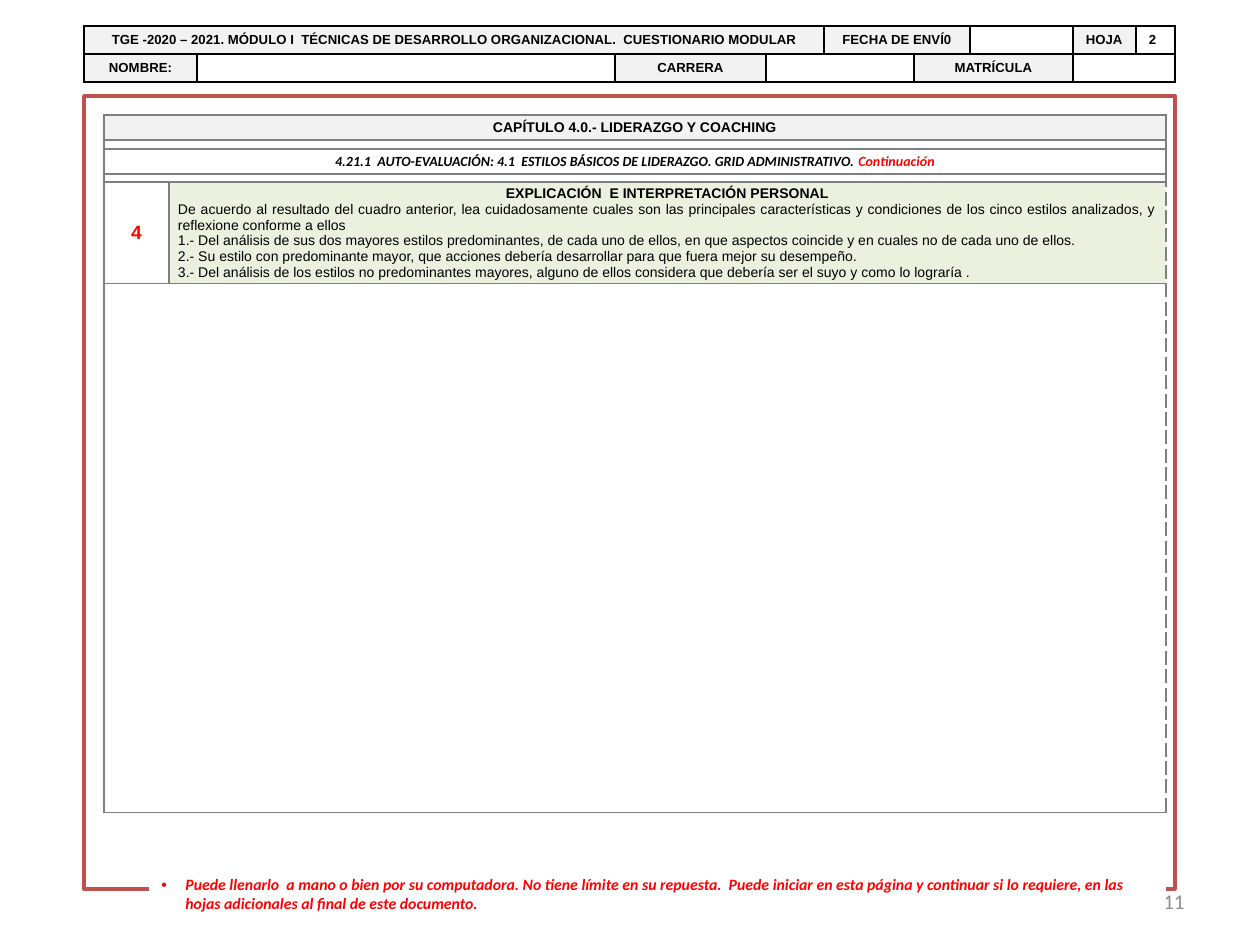
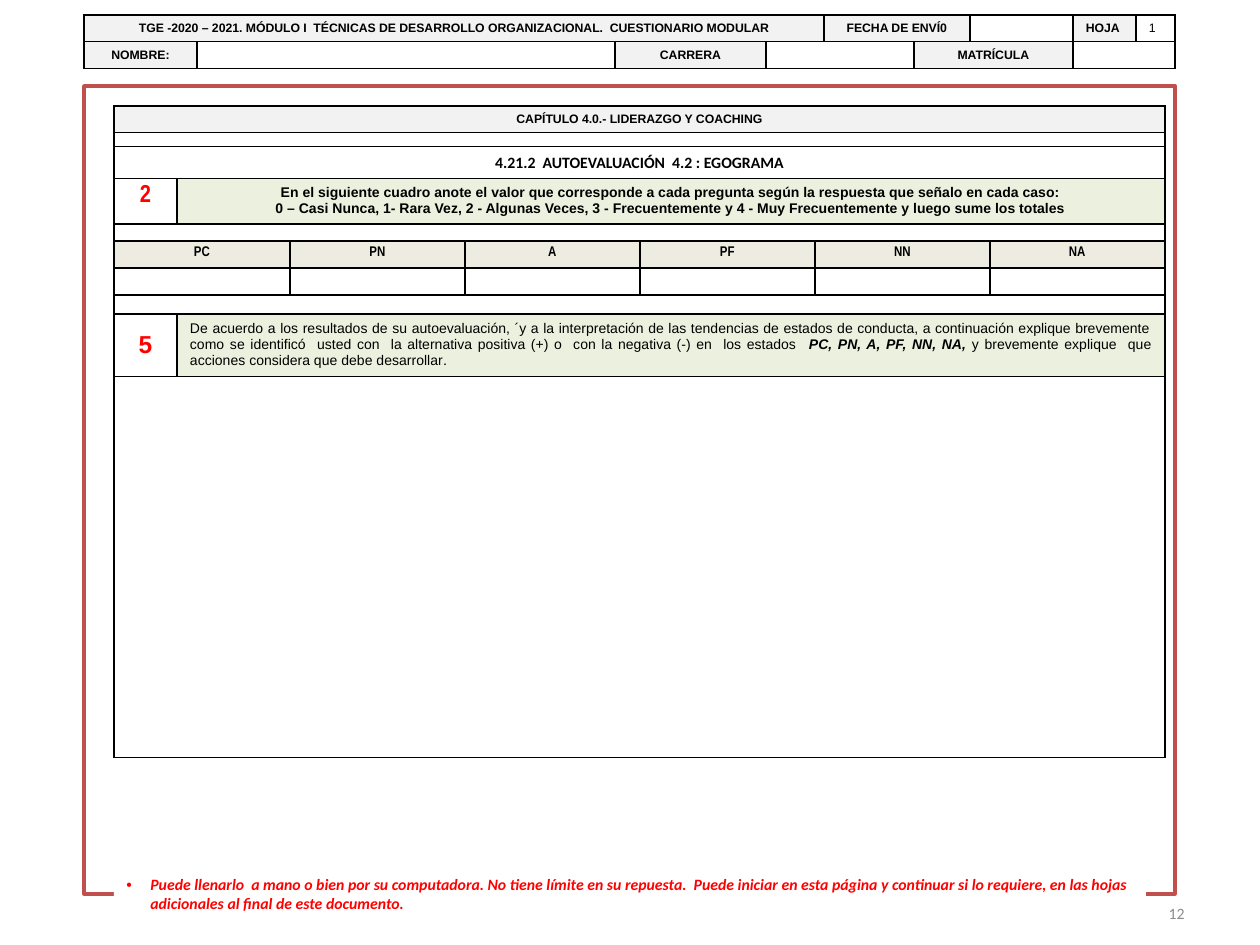
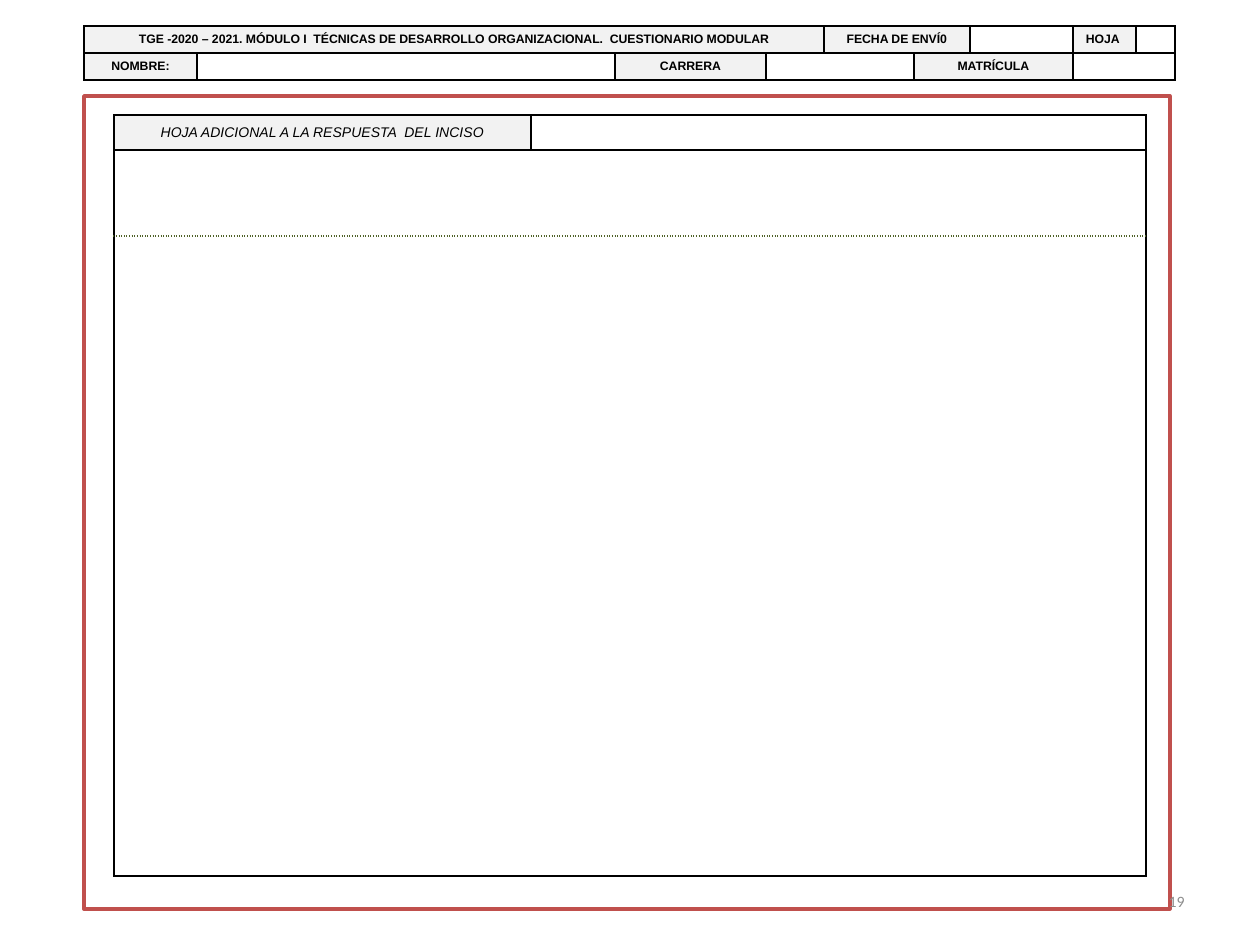
from lxml.etree import SubElement
from pptx import Presentation
from pptx.dml.color import RGBColor
from pptx.enum.shapes import MSO_SHAPE
from pptx.enum.text import MSO_ANCHOR, PP_ALIGN
from pptx.oxml.ns import qn
from pptx.util import Emu, Pt

PX = 914400 / 126
BLACK, WHITE, RED = "000000", "FFFFFF", "FF0000"
GRAY, LABEL, GREEN, BEIGE = "7F7F7F", "F2F2F2", "EBF1DE", "EEECE1"
FRAME, PAGE, DOTS = "C0504D", "8C8C8C", "4F6228"
CENTER, LEFT, RIGHT, JUSTIFY = (
    PP_ALIGN.CENTER, PP_ALIGN.LEFT, PP_ALIGN.RIGHT, PP_ALIGN.JUSTIFY)
HEADER_COLS = [113, 418, 151, 58, 90, 56, 103, 63, 39]
NOTE = ("Puede llenarlo  a mano o bien por su computadora. No tiene límite en su repuesta.  "
        "Puede iniciar en esta página y continuar si lo requiere, en las hojas adicionales "
        "al final de este documento.")


def px(n):
    return Emu(round(n * PX))


def rgb(color):
    return RGBColor.from_string(color)


def style(size, font="Arial", color=BLACK, bold=False, italic=False):
    return dict(size=size, font=font, color=color, bold=bold, italic=italic)


def write(p, runs, align=LEFT):
    p.alignment = align
    for text, look in runs:
        r = p.add_run()
        r.text = text
        r.font.size = Pt(look["size"])
        r.font.name = look["font"]
        r.font.bold = look["bold"]
        r.font.italic = look["italic"]
        r.font.color.rgb = rgb(look["color"])


def set_border(cell, side, color, dash="solid"):
    tc_pr = cell._tc.get_or_add_tcPr()
    tag = qn("a:ln" + side)
    for old in tc_pr.findall(tag):
        tc_pr.remove(old)
    ln = SubElement(tc_pr, tag, w=str(Pt(1)))
    fill = SubElement(ln, qn("a:solidFill"))
    SubElement(fill, qn("a:srgbClr"), val=color)
    SubElement(ln, qn("a:prstDash"), val=dash)
    tc_pr.insert("LRTB".index(side), ln)


def set_margins(cell, inset):
    cell.margin_left = cell.margin_right = px(inset[0])
    cell.margin_top, cell.margin_bottom = px(inset[1]), px(inset[2])


def add_grid(slide, x, y, cols, rows, color):
    gf = slide.shapes.add_table(len(rows), len(cols), px(x), px(y), px(sum(cols)), px(sum(rows)))
    table = gf.table
    table.first_row = table.horz_banding = False
    for col, width in zip(table.columns, cols):
        col.width = px(width)
    for row, height in zip(table.rows, rows):
        row.height = px(height)
    for cell in table.iter_cells():
        cell.fill.solid()
        cell.fill.fore_color.rgb = rgb(WHITE)
        set_margins(cell, (0, 0, 0))
        SubElement(cell.text_frame.paragraphs[0]._p, qn("a:endParaRPr"), sz="100")
        for side in "LRTB":
            set_border(cell, side, color)
    return table


def span(table, row, col, count):
    table.cell(row, col).merge(table.cell(row, col + count - 1))


def put(table, row, col, pars, fill=WHITE, inset=(13, 6, 6), anchor=MSO_ANCHOR.MIDDLE):
    cell = table.cell(row, col)
    cell.fill.fore_color.rgb = rgb(fill)
    cell.vertical_anchor = anchor
    set_margins(cell, inset)
    tf = cell.text_frame
    for i, (runs, align) in enumerate(pars):
        write(tf.add_paragraph() if i else tf.paragraphs[0], runs, align)
    return cell


def add_header(slide, x, y, row_height, size, sheet="", sheet_bold=True):
    table = add_grid(slide, x, y, HEADER_COLS, [row_height] * 2, BLACK)
    for row, col, count in [(0, 0, 4), (0, 4, 2), (1, 3, 2), (1, 5, 2), (1, 7, 2)]:
        span(table, row, col, count)
    bold = style(size, bold=True)
    labels = [
        (0, 0, "TGE -2020 – 2021. MÓDULO I  TÉCNICAS DE DESARROLLO ORGANIZACIONAL.  "
               "CUESTIONARIO MODULAR", CENTER),
        (0, 4, "FECHA DE ENVÍ0", CENTER),
        (0, 7, "HOJA", LEFT),
        (1, 0, "NOMBRE:", CENTER),
        (1, 2, "CARRERA", CENTER),
        (1, 5, "MATRÍCULA", CENTER),
    ]
    for row, col, text, align in labels:
        put(table, row, col, [([(text, bold)], align)], LABEL)
    if sheet:
        put(table, 0, 8, [([(sheet, style(size, bold=sheet_bold))], LEFT)])


def add_box(slide, x, y, w, h):
    sp = slide.shapes.add_shape(MSO_SHAPE.RECTANGLE, px(x), px(y), px(w), px(h))
    sp.shadow.inherit = False
    return sp


def add_frame(slide, x, y, w, h, filled=False):
    sp = add_box(slide, x, y, w, h)
    sp.line.color.rgb = rgb(FRAME)
    sp.line.width = Pt(2)
    if filled:
        sp.fill.solid()
        sp.fill.fore_color.rgb = rgb(WHITE)
    else:
        sp.fill.background()


def add_note(slide, x, y, w, h):
    sp = add_box(slide, x, y, w, h)
    sp.fill.solid()
    sp.fill.fore_color.rgb = rgb(WHITE)
    sp.line.fill.background()
    tf = sp.text_frame
    tf.word_wrap = True
    tf.vertical_anchor = MSO_ANCHOR.MIDDLE
    p = tf.paragraphs[0]
    write(p, [(NOTE, style(9, "Calibri", RED, True, True))])
    p_pr = p._p.get_or_add_pPr()
    p_pr.set("marL", str(px(24)))
    p_pr.set("indent", str(-px(24)))
    SubElement(p_pr, qn("a:buFont"), typeface="Arial")
    SubElement(p_pr, qn("a:buChar"), char="•")


def add_page_number(slide, x, y, number, size):
    tf = slide.shapes.add_textbox(px(x), px(y), px(294), px(50)).text_frame
    tf.word_wrap = True
    tf.vertical_anchor = MSO_ANCHOR.MIDDLE
    write(tf.paragraphs[0], [(number, style(size, "Calibri", PAGE))], RIGHT)


def add_leadership(slide, x, y):
    table = add_grid(slide, x, y, [65, 997], [25, 9, 25, 8, 96, 529], GRAY)
    for row in (0, 1, 2, 3, 5):
        span(table, row, 0, 2)
    for row in (3, 4, 5):
        set_border(table.cell(row, 1), "R", GRAY, "sysDash")
    for row in (3, 5):
        set_border(table.cell(row, 0), "R", GRAY, "sysDash")
    inset = (9, 1, 0)
    bold, plain = style(8, bold=True), style(8)
    put(table, 0, 0, [([("CAPÍTULO 4.0.- LIDERAZGO Y COACHING", bold)], CENTER)], LABEL, inset)
    put(table, 2, 0, [([
        ("4.21.1  AUTO-EVALUACIÓN: 4.1  ESTILOS BÁSICOS DE LIDERAZGO. GRID ADMINISTRATIVO. ",
         style(8, "Calibri", BLACK, True, True)),
        ("Continuación", style(8, "Calibri", RED, True, True))], CENTER)], WHITE, inset)
    put(table, 4, 0, [([("4", style(11, color=RED, bold=True))], CENTER)], WHITE, inset)
    steps = [
        "De acuerdo al resultado del cuadro anterior, lea cuidadosamente cuales son las "
        "principales características y condiciones de los cinco estilos analizados, y "
        "reflexione conforme a ellos",
        "1.- Del análisis de sus dos mayores estilos predominantes, de cada uno de ellos, en "
        "que aspectos coincide y en cuales no de cada uno de ellos.",
        "2.- Su estilo con predominante mayor, que acciones debería desarrollar para que "
        "fuera mejor su desempeño.",
        "3.- Del análisis de los estilos no predominantes mayores, alguno de ellos considera "
        "que debería ser el suyo y como lo lograría .",
    ]
    heading = ([("EXPLICACIÓN  E INTERPRETACIÓN PERSONAL", bold)], CENTER)
    put(table, 4, 1, [heading] + [([(step, plain)], JUSTIFY) for step in steps], GREEN, inset)


def add_egogram(slide, x, y):
    table = add_grid(slide, x, y, [63, 113] + [175] * 5,
                     [26, 14, 32, 45, 17, 27, 27, 19, 61, 381], BLACK)
    for row in (0, 1, 2, 4, 7, 9):
        span(table, row, 0, 7)
    for row in (3, 8):
        span(table, row, 1, 6)
    for row in (5, 6):
        span(table, row, 0, 2)
    bold, plain = style(8, bold=True), style(8)
    top = MSO_ANCHOR.TOP
    put(table, 0, 0, [([("CAPÍTULO 4.0.- LIDERAZGO Y COACHING", style(7, bold=True))], CENTER)],
        LABEL)
    put(table, 2, 0, [([("4.21.2  AUTOEVALUACIÓN  4.2 : EGOGRAMA",
                         style(9, "Calibri", bold=True))], CENTER)])
    put(table, 3, 0, [([("2", style(14, "Arial Narrow", RED, True))], CENTER)], anchor=top)
    put(table, 3, 1, [([(text, bold)], CENTER) for text in (
        "En el siguiente cuadro anote el valor que corresponde a cada pregunta según la "
        "respuesta que señalo en cada caso:",
        "0 – Casi Nunca, 1- Rara Vez, 2 - Algunas Veces, 3 - Frecuentemente y 4 - Muy "
        "Frecuentemente y luego sume los totales")], GREEN, anchor=top)
    for col, state in zip((0, 2, 3, 4, 5, 6), ("PC", "PN", "A", "PF", "NN", "NA")):
        cell = put(table, 5, col, [([(state, style(8, "Arial Narrow", bold=True))], CENTER)],
                   BEIGE, anchor=top)
        cell.text_frame.paragraphs[0].line_spacing = 0.9
    put(table, 8, 0, [([("5", style(14, color=RED, bold=True))], CENTER)])
    put(table, 8, 1, [([
        ("De acuerdo a los resultados de su autoevaluación, ´y a la interpretación de las "
         "tendencias de estados de conducta, a continuación explique brevemente como se "
         "identificó  usted con  la alternativa positiva (+) o  con la negativa (-) en  los "
         "estados  ", plain),
        ("PC, PN, A, PF, NN, NA,", style(8, bold=True, italic=True)),
        (" y brevemente explique  que acciones considera que debe desarrollar", plain),
        (".", style(8, "Calibri"))], JUSTIFY)], GREEN)


def add_extra_sheet(slide, x, y):
    table = add_grid(slide, x, y, [417, 615], [35, 86, 640], BLACK)
    put(table, 0, 0, [([("HOJA ADICIONAL A LA RESPUESTA  DEL INCISO",
                         style(8, italic=True))], CENTER)], LABEL, (13, 1, 0))
    for row, side in ((1, "B"), (2, "T")):
        span(table, row, 0, 2)
        for col in (0, 1):
            set_border(table.cell(row, col), side, DOTS, "dot")


def leadership_slide(slide):
    add_page_number(slide, 903, 876, "11", 12)
    add_header(slide, 84, 26, 28, 7.5, "2")
    add_leadership(slide, 104, 115)
    add_frame(slide, 84, 96, 1091, 793)
    add_note(slide, 149, 879, 1017, 30)


def egogram_slide(slide):
    add_frame(slide, 84, 86, 1091, 808)
    add_egogram(slide, 114, 106)
    add_page_number(slide, 903, 888, "12", 9)
    add_header(slide, 84, 15, 26, 7, "1", False)
    add_note(slide, 114, 879, 1032, 30)


def extra_slide(slide):
    add_frame(slide, 84, 96, 1086, 813, True)
    add_extra_sheet(slide, 114, 115)
    add_page_number(slide, 903, 876, "19", 9)
    add_header(slide, 84, 26, 27, 7)


def main():
    prs = Presentation()
    prs.slide_width, prs.slide_height = px(1260), px(945)
    for build in (leadership_slide, egogram_slide, extra_slide):
        build(prs.slides.add_slide(prs.slide_layouts[6]))
    prs.save("out.pptx")


if __name__ == "__main__":
    main()
